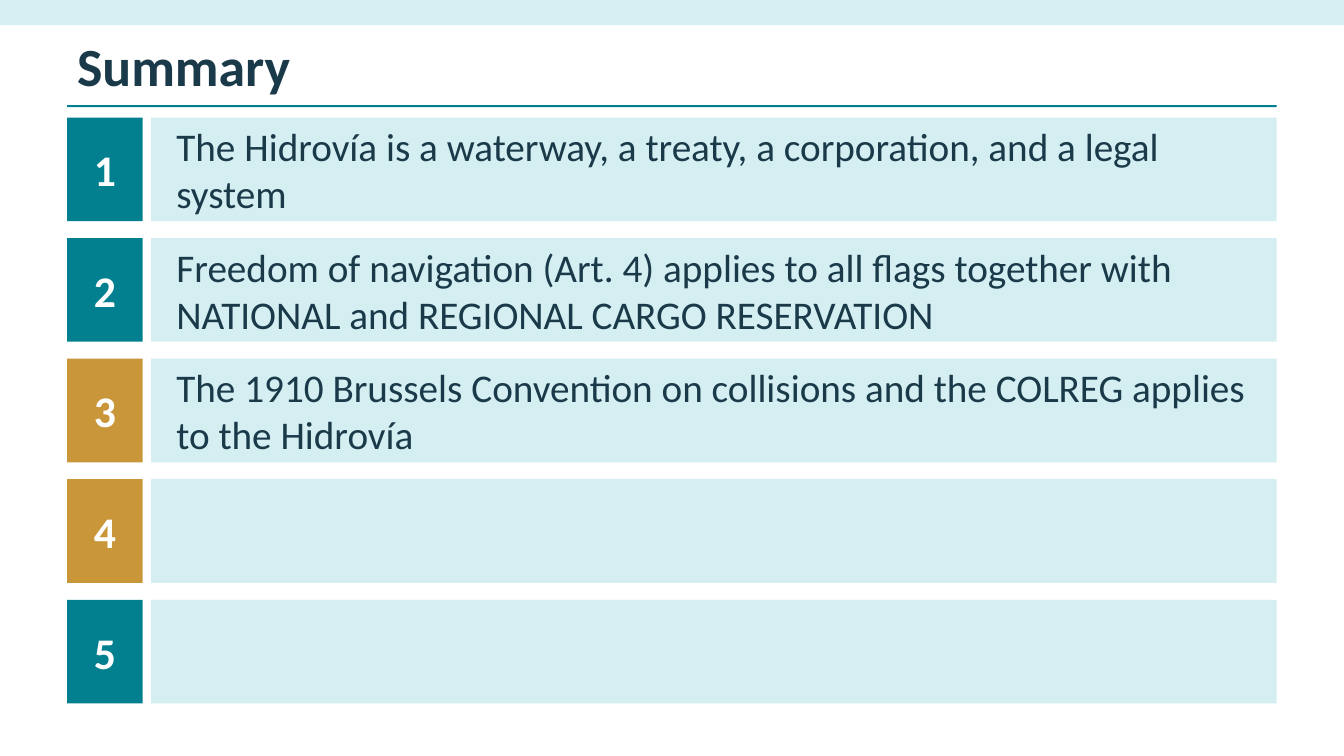
from pptx import Presentation
from pptx.dml.color import RGBColor
from pptx.enum import shapes, text
from pptx.util import Pt

TITLE = "Summary"
TEAL, GOLD, PALE, INK, WHITE = "028090", "C9973A", "D4EEF2", "1A3A4A", "FFFFFF"
ROWS = [
    (TEAL, "The Hidrovía is a waterway, a treaty, a corporation, and a legal system"),
    (TEAL, "Freedom of navigation (Art. 4) applies to all flags together with "
           "NATIONAL and REGIONAL CARGO RESERVATION"),
    (GOLD, "The 1910 Brussels Convention on collisions and the COLREG applies to the Hidrovía"),
    (GOLD, ""),
    (TEAL, ""),
]
SLIDE_W, SLIDE_H = 960, 540
LEFT, WIDTH = 48, 864
ROW_TOP, ROW_H, ROW_PITCH = 84, 74, 86.1
NUMBER_W, GAP = 54, 6


def rgb(value):
    return RGBColor.from_string(value)


def add_rect(s, x, y, w, h, fill):
    sp = s.shapes.add_shape(shapes.MSO_SHAPE.RECTANGLE, Pt(x), Pt(y), Pt(w), Pt(h))
    sp.shadow.inherit = False
    sp.fill.solid()
    sp.fill.fore_color.rgb = rgb(fill)
    sp.line.fill.background()
    return sp


def write(sp, content, size, color, bold=False, align=text.PP_ALIGN.LEFT, inset=(7.2, 3.6)):
    tf = sp.text_frame
    tf.word_wrap = True
    tf.vertical_anchor = text.MSO_ANCHOR.MIDDLE
    tf.margin_left = tf.margin_right = Pt(inset[0])
    tf.margin_top = tf.margin_bottom = Pt(inset[1])
    p = tf.paragraphs[0]
    p.text = content
    p.alignment = align
    p.font.name = "Calibri"
    p.font.size = Pt(size)
    p.font.bold = bold
    p.font.color.rgb = rgb(color)


prs = Presentation()
prs.slide_width, prs.slide_height = Pt(SLIDE_W), Pt(SLIDE_H)
s = prs.slides.add_slide(prs.slide_layouts[6])

add_rect(s, 0, 0, SLIDE_W, 18, PALE)
title = s.shapes.add_textbox(Pt(LEFT), Pt(22.5), Pt(WIDTH), Pt(48))
write(title, TITLE, 38.4, INK, bold=True)
add_rect(s, LEFT, 75, WIDTH, 1.5, TEAL)

bar_x = LEFT + NUMBER_W + GAP
for i, (color, point) in enumerate(ROWS):
    y = ROW_TOP + i * ROW_PITCH
    number = add_rect(s, LEFT, y, NUMBER_W, ROW_H, color)
    write(number, str(i + 1), 31.2, WHITE, True, text.PP_ALIGN.CENTER, (9, 9))
    bar = add_rect(s, bar_x, y, LEFT + WIDTH - bar_x, ROW_H, PALE)
    if point:
        write(bar, point, 28, INK, inset=(18, 9))

prs.save("out.pptx")
